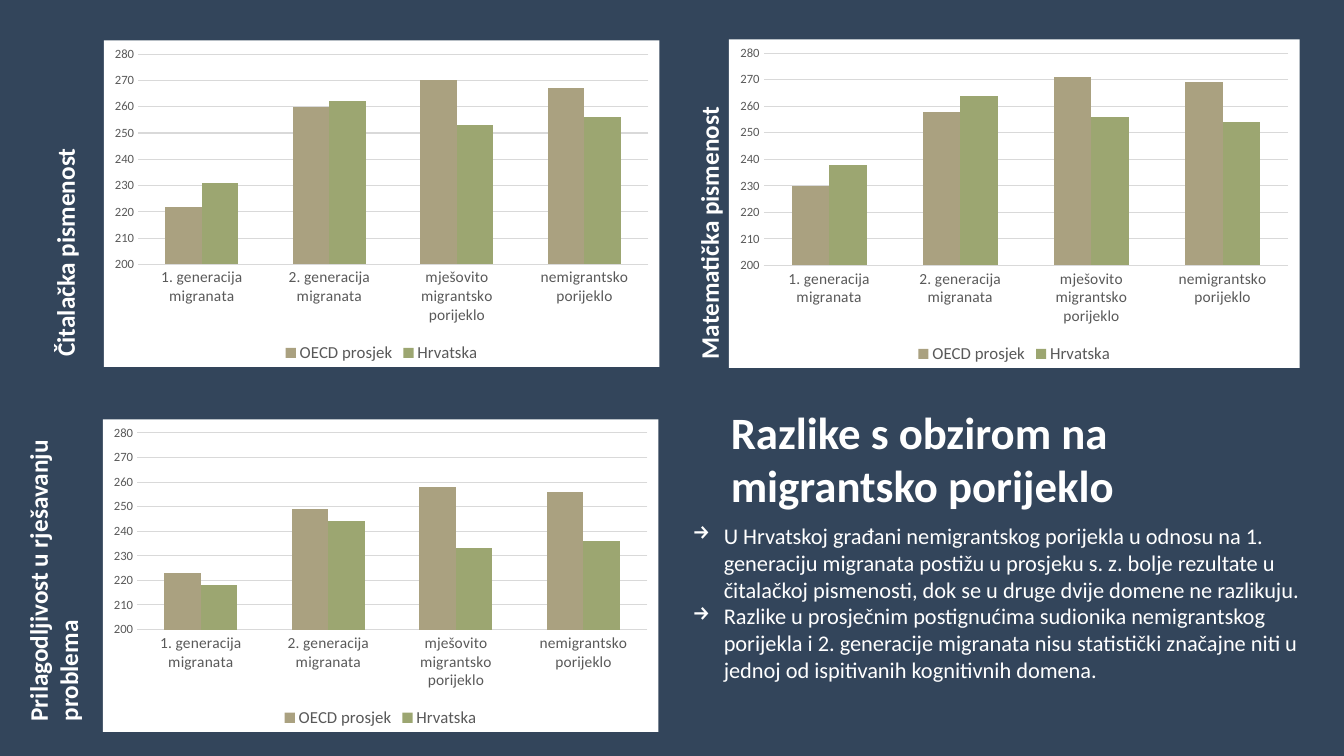
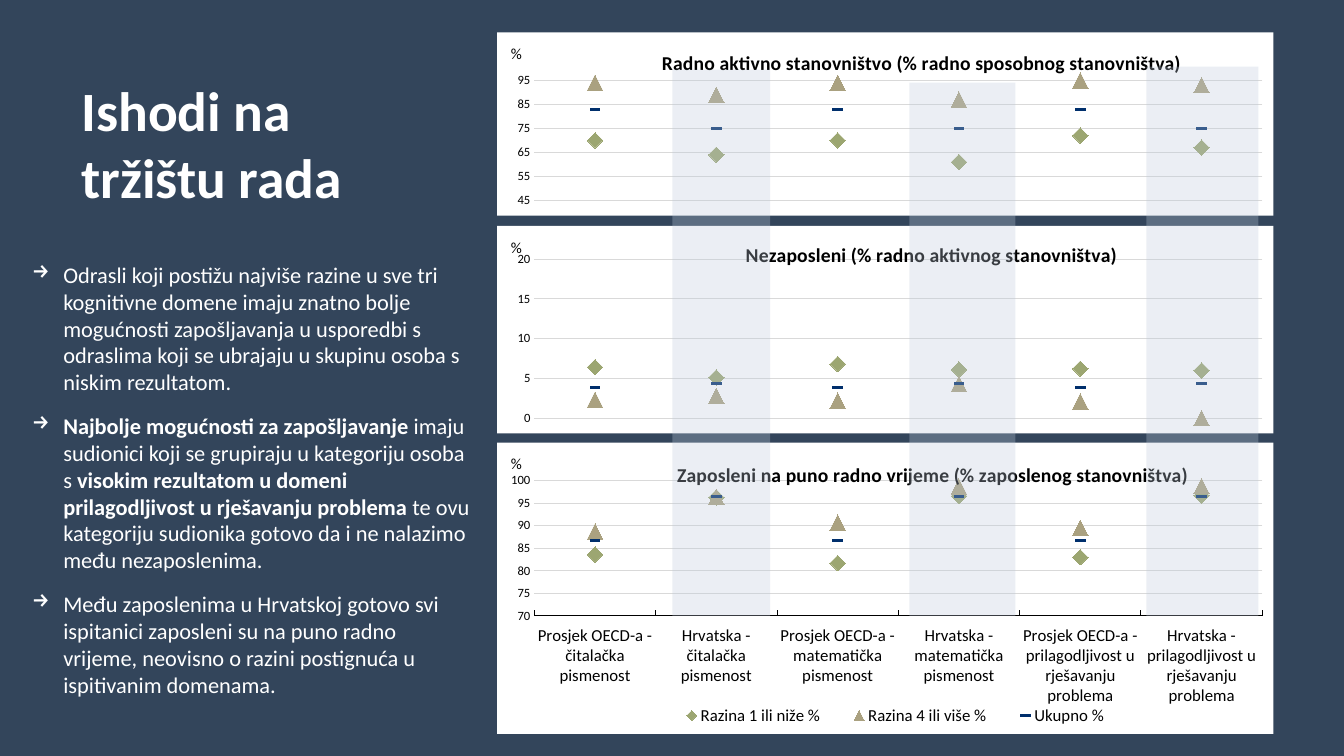
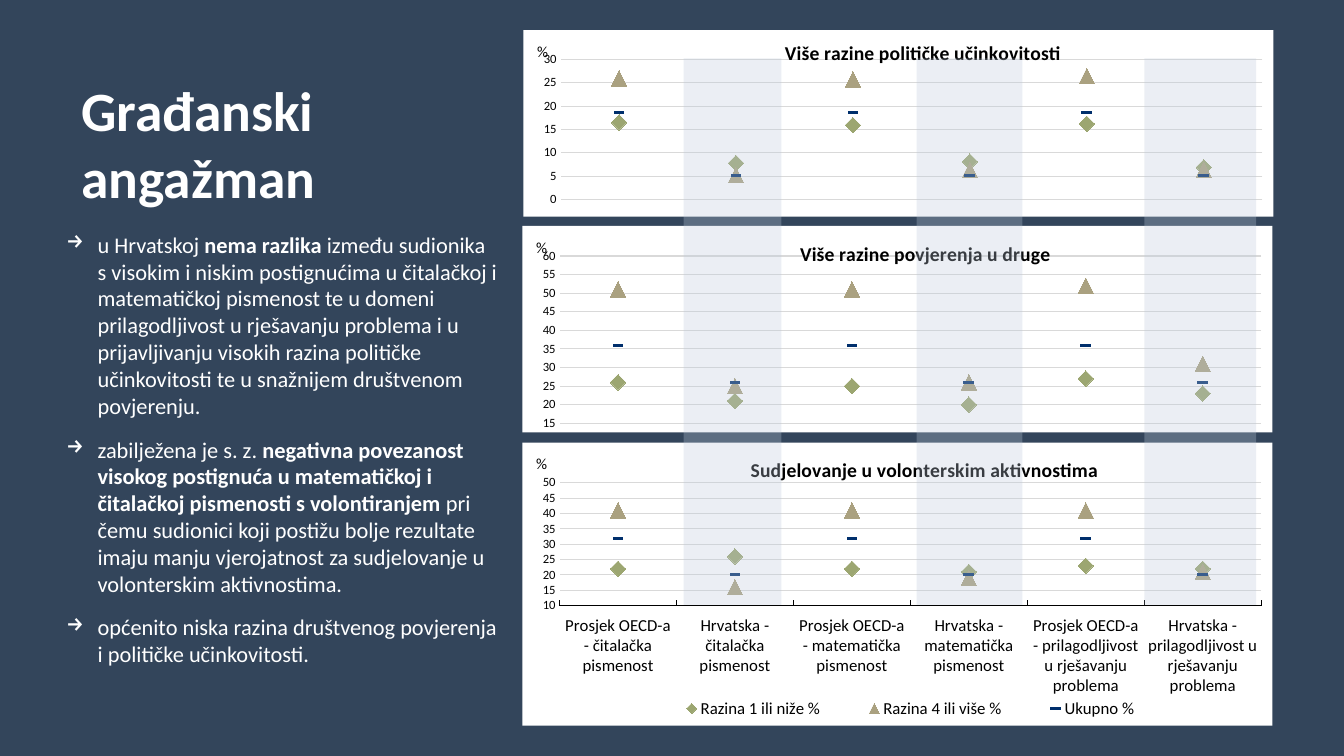
import pptx
import pptx.chart.data
import pptx.dml.color
import pptx.enum.chart
import pptx.enum.shapes
import pptx.enum.text
import pptx.oxml
import pptx.oxml.ns
import pptx.util

Inches = pptx.util.Inches
Pt = pptx.util.Pt
RGBColor = pptx.dml.color.RGBColor
qn = pptx.oxml.ns.qn
XL_CHART_TYPE = pptx.enum.chart.XL_CHART_TYPE
XL_MARKER_STYLE = pptx.enum.chart.XL_MARKER_STYLE
XL_TICK_MARK = pptx.enum.chart.XL_TICK_MARK

NAVY = RGBColor(0x33, 0x45, 0x5B)
WHITE = RGBColor(0xFF, 0xFF, 0xFF)
BLACK = RGBColor(0x00, 0x00, 0x00)
GRAY = RGBColor(0x59, 0x59, 0x59)
GRID = RGBColor(0xD9, 0xD9, 0xD9)
SAND = RGBColor(0xAA, 0xA1, 0x80)
GREEN = RGBColor(0x9C, 0xA6, 0x71)
BLUE = RGBColor(0x00, 0x2F, 0x6C)
BAND = RGBColor(0xBD, 0xCA, 0xDB)
FONT = "Calibri"

ORIGINS = ["1. generacija migranata", "2. generacija migranata",
           "mješovito migrantsko porijeklo", "nemigrantsko porijeklo"]
DOMAINS = ["čitalačka pismenost", "matematička pismenost",
           "prilagodljivost u rješavanju problema"]
GROUPS = [f"{place} - {domain}" for domain in DOMAINS
          for place in ("Prosjek OECD-a", "Hrvatska")]
LEVELS = [
    ("Razina 1 ili niže %", XL_MARKER_STYLE.DIAMOND, 11, GREEN),
    ("Razina 4 ili više %", XL_MARKER_STYLE.TRIANGLE, 11, SAND),
    ("Ukupno %", XL_MARKER_STYLE.DASH, 7, BLUE),
]
PLOT_LEFT, PLOT_RIGHT = 0.37, 0.11


def set_font(font, size, color, bold=False):
    """Apply the shared typeface with a size, colour and weight."""
    font.name = FONT
    font.size = Pt(size)
    font.bold = bold
    font.color.rgb = color


def add_text(slide, box, paragraphs, size, bold=False, bullets=False, after=0,
             rotation=0, middle=False):
    """Add white text; parts between double asterisks are bold."""
    shape = slide.shapes.add_textbox(*map(Inches, box))
    shape.rotation = rotation
    frame = shape.text_frame
    frame.word_wrap = True
    if middle:
        frame.vertical_anchor = pptx.enum.text.MSO_ANCHOR.MIDDLE
    for index, text in enumerate(paragraphs):
        paragraph = frame.add_paragraph() if index else frame.paragraphs[0]
        if bullets:
            properties = paragraph._p.get_or_add_pPr()
            properties.set("marL", str(Inches(0.31)))
            properties.set("indent", str(Inches(-0.31)))
            bullet = pptx.oxml.parse_xml(
                f'<a:buChar {pptx.oxml.ns.nsdecls("a")} char="→"/>')
            properties.append(bullet)
        paragraph.space_after = Pt(after)
        for position, part in enumerate(text.split("**")):
            if part:
                run = paragraph.add_run()
                run.text = part
                set_font(run.font, size, WHITE, bold or position % 2 == 1)


def set_layout(element, box, left, top, width=None, height=None, inner=False):
    """Place a chart part by inches within its chart box."""
    lengths = [("x", left, box[2]), ("y", top, box[3]),
               ("w", width, box[2]), ("h", height, box[3])]
    values = "".join(f'<c:{name} val="{length / whole:.4f}"/>'
                     for name, length, whole in lengths if length is not None)
    target = '<c:layoutTarget val="inner"/>' if inner else ""
    layout = pptx.oxml.parse_xml(
        f'<c:layout {pptx.oxml.ns.nsdecls("c")}><c:manualLayout>{target}'
        f'<c:xMode val="edge"/><c:yMode val="edge"/>{values}'
        '</c:manualLayout></c:layout>')
    for existing in element.findall(qn("c:layout")):
        element.remove(existing)
    leading = [child for child in element
               if child.tag in (qn("c:tx"), qn("c:legendPos"))]
    element.insert(len(leading), layout)


def add_base_chart(slide, box, kind, categories, series, text_color):
    """Add a white chart with the shared fonts, axis and grid."""
    data = pptx.chart.data.CategoryChartData()
    data.categories = categories
    for name, values in series:
        data.add_series(name, values)
    chart = slide.shapes.add_chart(kind, *map(Inches, box), data).chart
    set_font(chart.font, 10, BLACK)
    chart._chartSpace.find(qn("c:txPr")).addprevious(pptx.oxml.parse_xml(
        f'<c:spPr {pptx.oxml.ns.nsdecls("c", "a")}><a:solidFill>'
        f'<a:srgbClr val="{WHITE}"/></a:solidFill>'
        '<a:ln><a:noFill/></a:ln></c:spPr>'))
    chart.has_title = False
    chart.has_legend = False
    chart.plots[0].vary_by_categories = False
    axis = chart.value_axis
    axis.format.line.fill.background()
    axis.major_gridlines.format.line.color.rgb = GRID
    axis.major_gridlines.format.line.width = Pt(0.75)
    set_font(axis.tick_labels.font, 9, text_color)
    return chart


def set_scale(axis, low, high, step, number_format, tick):
    """Set the range, steps, number format and ticks of a value axis."""
    axis.minimum_scale, axis.maximum_scale, axis.major_unit = low, high, step
    axis.tick_labels.number_format = number_format
    axis.tick_labels.number_format_is_linked = False
    axis.major_tick_mark = tick


def style_categories(axis, size, color, line, tick):
    """Style the labels and line of a category axis."""
    set_font(axis.tick_labels.font, size, color)
    axis.format.line.color.rgb = line
    axis.format.line.width = Pt(0.75)
    axis.major_tick_mark = tick


def add_legend(chart, color, overlay):
    """Show the legend at the bottom."""
    chart.has_legend = True
    chart.legend.position = pptx.enum.chart.XL_LEGEND_POSITION.BOTTOM
    chart.legend.include_in_layout = overlay
    set_font(chart.legend.font, 12, color)


def add_score_chart(slide, box, oecd, croatia):
    """Add a column chart of mean scores by origin."""
    series = [("OECD prosjek", oecd), ("Hrvatska", croatia)]
    chart = add_base_chart(slide, box, XL_CHART_TYPE.COLUMN_CLUSTERED, ORIGINS,
                           series, GRAY)
    set_scale(chart.value_axis, 200, 280, 10, "0", XL_TICK_MARK.NONE)
    style_categories(chart.category_axis, 11, GRAY, GRID, XL_TICK_MARK.NONE)
    add_legend(chart, GRAY, False)
    plot = chart.plots[0]
    plot.gap_width = 150
    plot.overlap = 0
    for column, color in zip(plot.series, (SAND, GREEN)):
        column.format.fill.solid()
        column.format.fill.fore_color.rgb = color


def add_level_chart(slide, box, title, title_at, plot_span, scale, values,
                    legend=None):
    """Add a marker chart of the shares by proficiency level."""
    names = [level[0] for level in LEVELS]
    chart = add_base_chart(slide, box, XL_CHART_TYPE.LINE_MARKERS, GROUPS,
                           zip(names, values), BLACK)
    set_scale(chart.value_axis, *scale, "General", XL_TICK_MARK.INSIDE)
    chart.has_title = True
    chart.value_axis.has_title = True
    labels = [(chart.chart_title, title, 14, True, title_at),
              (chart.value_axis.axis_title, "%", 11, False, (0.11, 0.08))]
    for label, text, size, bold, place in labels:
        run = label.text_frame.paragraphs[0].add_run()
        run.text = text
        set_font(run.font, size, BLACK, bold)
        label.text_frame._txBody.find(qn("a:bodyPr")).set("rot", "0")
        set_layout(label._element, box, *place)
    top, height = plot_span
    plot_area = chart._chartSpace.find(qn("c:chart")).find(qn("c:plotArea"))
    set_layout(plot_area, box, PLOT_LEFT, top,
               box[2] - PLOT_LEFT - PLOT_RIGHT, height, inner=True)
    for line, (_, style, size, color) in zip(chart.plots[0].series, LEVELS):
        line.smooth = False
        line.format.line.fill.background()
        line.marker.style = style
        line.marker.size = size
        line.marker.format.fill.solid()
        line.marker.format.fill.fore_color.rgb = color
        line.marker.format.line.fill.background()
    if legend:
        axis = chart.category_axis
        style_categories(axis, 12, BLACK, BLACK, XL_TICK_MARK.INSIDE)
        axis.tick_label_position = pptx.enum.chart.XL_TICK_LABEL_POSITION.LOW
        add_legend(chart, BLACK, True)
        set_layout(chart.legend._element, box, *legend)
    else:
        chart.category_axis.visible = False


def add_band(slide, left, top, width, bottom):
    """Add a translucent band over the columns for Croatia."""
    shape = slide.shapes.add_shape(
        pptx.enum.shapes.MSO_SHAPE.RECTANGLE,
        *map(Inches, (left, top, width, bottom - top)))
    shape.shadow.inherit = False
    shape.line.fill.background()
    shape.fill.solid()
    shape.fill.fore_color.rgb = BAND
    color = shape._element.spPr.find(qn("a:solidFill"))[0]
    color.append(pptx.oxml.parse_xml(
        f'<a:alpha {pptx.oxml.ns.nsdecls("a")} val="30000"/>'))


def add_slide(presentation):
    """Add a blank slide."""
    return presentation.slides.add_slide(presentation.slide_layouts[6])


def build_score_slide(presentation):
    """Build the slide with three score charts and a summary."""
    slide = add_slide(presentation)
    captions = [
        ("Čitalačka pismenost", (-0.84, 1.95, 2.97, 0.4)),
        ("Matematička pismenost", (5.48, 1.91, 3.1, 0.4)),
        ("Prilagodljivost u rješavanju problema", (-1.02, 5.35, 3.1, 0.71)),
    ]
    for caption, box in captions:
        add_text(slide, box, [caption], 18, bold=True, rotation=270)
    add_text(slide, (7.15, 3.82, 5.74, 1.45),
             ["Razlike s obzirom na migrantsko porijeklo"], 32, bold=True,
             middle=True)
    add_text(slide, (6.77, 5.13, 6.39, 2.26), [
        "U Hrvatskoj građani nemigrantskog porijekla u odnosu na 1. generaciju "
        "migranata postižu u prosjeku s. z. bolje rezultate u čitalačkoj "
        "pismenosti, dok se u druge dvije domene ne razlikuju.",
        "Razlike u prosječnim postignućima sudionika nemigrantskog porijekla i "
        "2. generacije migranata nisu statistički značajne niti u jednoj od "
        "ispitivanih kognitivnih domena.",
    ], 16, bullets=True)
    add_score_chart(slide, (1.03, 0.4, 5.51, 3.24),
                    (222, 260, 270, 267), (231, 262, 253, 256))
    add_score_chart(slide, (7.23, 0.39, 5.66, 3.26),
                    (230, 258, 271, 269), (238, 264, 256, 254))
    add_score_chart(slide, (1.02, 4.16, 5.51, 3.1),
                    (223, 249, 258, 256), (218, 244, 233, 236))


def build_level_slide(presentation, title, body_box, body, charts, bands,
                      band_bottom):
    """Build a slide with a text column and three stacked level charts."""
    slide = add_slide(presentation)
    add_text(slide, (0.71, 0.69, 3.78, 1.45), [title], 39.6, bold=True,
             middle=True)
    for chart in charts:
        add_level_chart(slide, *chart)
    for band in bands:
        add_band(slide, *band, band_bottom)
    add_text(slide, body_box, body, 16, bullets=True, after=12)


def build_labour_slide(presentation):
    """Build the slide on labour market outcomes."""
    body = [
        "Odrasli koji postižu najviše razine u sve tri kognitivne domene imaju "
        "znatno bolje mogućnosti zapošljavanja u usporedbi s odraslima koji se "
        "ubrajaju u skupinu osoba s niskim rezultatom.",
        "**Najbolje mogućnosti za zapošljavanje **imaju sudionici koji se "
        "grupiraju u kategoriju osoba s **visokim rezultatom u domeni "
        "prilagodljivost u rješavanju problema **te ovu kategoriju sudionika "
        "gotovo da i ne nalazimo među nezaposlenima.",
        "Među zaposlenima u Hrvatskoj gotovo svi ispitanici zaposleni su na "
        "puno radno vrijeme, neovisno o razini postignuća u ispitivanim "
        "domenama.",
    ]
    charts = [
        ((4.93, 0.32, 7.7, 1.82),
         "Radno aktivno stanovništvo (% radno sposobnog stanovništva)",
         (1.6, 0.13), (0.36, 1.31), (45, 100, 10),
         [(70, 64, 70, 61, 72, 67), (94, 89, 94, 87, 95, 93), (83, 75) * 3]),
        ((4.93, 2.24, 7.7, 2.06),
         "Nezaposleni (% radno aktivnog stanovništva)",
         (2.43, 0.12), (0.33, 1.58), (0, 20, 5),
         [(6.4, 5.1, 6.8, 6.1, 6.2, 6), (2.3, 2.8, 2.2, 4.3, 2.1, 0),
          (3.9, 4.3) * 3]),
        ((4.93, 4.39, 7.7, 2.89),
         "Zaposleni na puno radno vrijeme (% zaposlenog stanovništva)",
         (1.75, 0.15), (0.38, 1.34), (70, 100, 5),
         [(83.6, 96.3, 81.7, 96.6, 83, 96.7),
          (88.7, 96.4, 90.7, 98.7, 89.5, 98.8), (86.7, 96.4) * 3],
         (1.6, 2.58, 4.7, 0.26)),
    ]
    bands = [(9.02, 0.82, 1.05), (11.37, 0.66, 1.11), (6.67, 0.69, 0.97)]
    build_level_slide(presentation, "Ishodi na tržištu rada",
                      (0.22, 2.54, 4.57, 4.75), body, charts, bands, 6.11)


def build_civic_slide(presentation):
    """Build the slide on civic engagement."""
    body = [
        "u Hrvatskoj **nema razlika **između sudionika s visokim i niskim "
        "postignućima u čitalačkoj i matematičkoj pismenost te u domeni "
        "prilagodljivost u rješavanju problema i u prijavljivanju visokih "
        "razina političke učinkovitosti te u snažnijem društvenom povjerenju.",
        "zabilježena je s. z. **negativna povezanost visokog postignuća u "
        "matematičkoj i čitalačkoj pismenosti s volontiranjem** pri čemu "
        "sudionici koji postižu bolje rezultate imaju manju vjerojatnost za "
        "sudjelovanje u volonterskim aktivnostima.",
        "općenito niska razina društvenog povjerenja i političke "
        "učinkovitosti.",
    ]
    charts = [
        ((5.19, 0.3, 7.44, 1.85), "Više razine političke učinkovitosti",
         (2.56, 0.05), (0.29, 1.39), (0, 30, 5),
         [(16.5, 7.8, 15.9, 8.1, 16.2, 6.9), (25.9, 5.2, 25.7, 6.3, 26.4, 6.3),
          (18.7, 5.2) * 3]),
        ((5.18, 2.24, 7.44, 2.05), "Više razine povjerenja u druge",
         (2.72, 0.11), (0.3, 1.66), (15, 60, 5),
         [(26, 21, 25, 20, 27, 23), (51, 25, 51, 26, 52, 31), (36, 26) * 3]),
        ((5.18, 4.39, 7.44, 2.81), "Sudjelovanje u volonterskim aktivnostima",
         (2.23, 0.1), (0.4, 1.22), (10, 50, 5),
         [(22, 26, 22, 21, 23, 22), (41, 16, 41, 19, 41, 21), (32, 20) * 3],
         (1.2, 2.51, 5.3, 0.26)),
    ]
    bands = [(6.78, 0.58, 0.97), (9.09, 0.58, 1.05), (11.35, 0.58, 1.11)]
    build_level_slide(presentation, "Građanski angažman",
                      (0.56, 2.24, 4.48, 5.02), body, charts, bands, 6.0)


def main():
    """Create and save the presentation."""
    presentation = pptx.Presentation()
    presentation.slide_width = Inches(13.33)
    presentation.slide_height = Inches(7.5)
    background = presentation.slide_master.background.fill
    background.solid()
    background.fore_color.rgb = NAVY
    build_score_slide(presentation)
    build_labour_slide(presentation)
    build_civic_slide(presentation)
    presentation.save("out.pptx")


if __name__ == "__main__":
    main()
